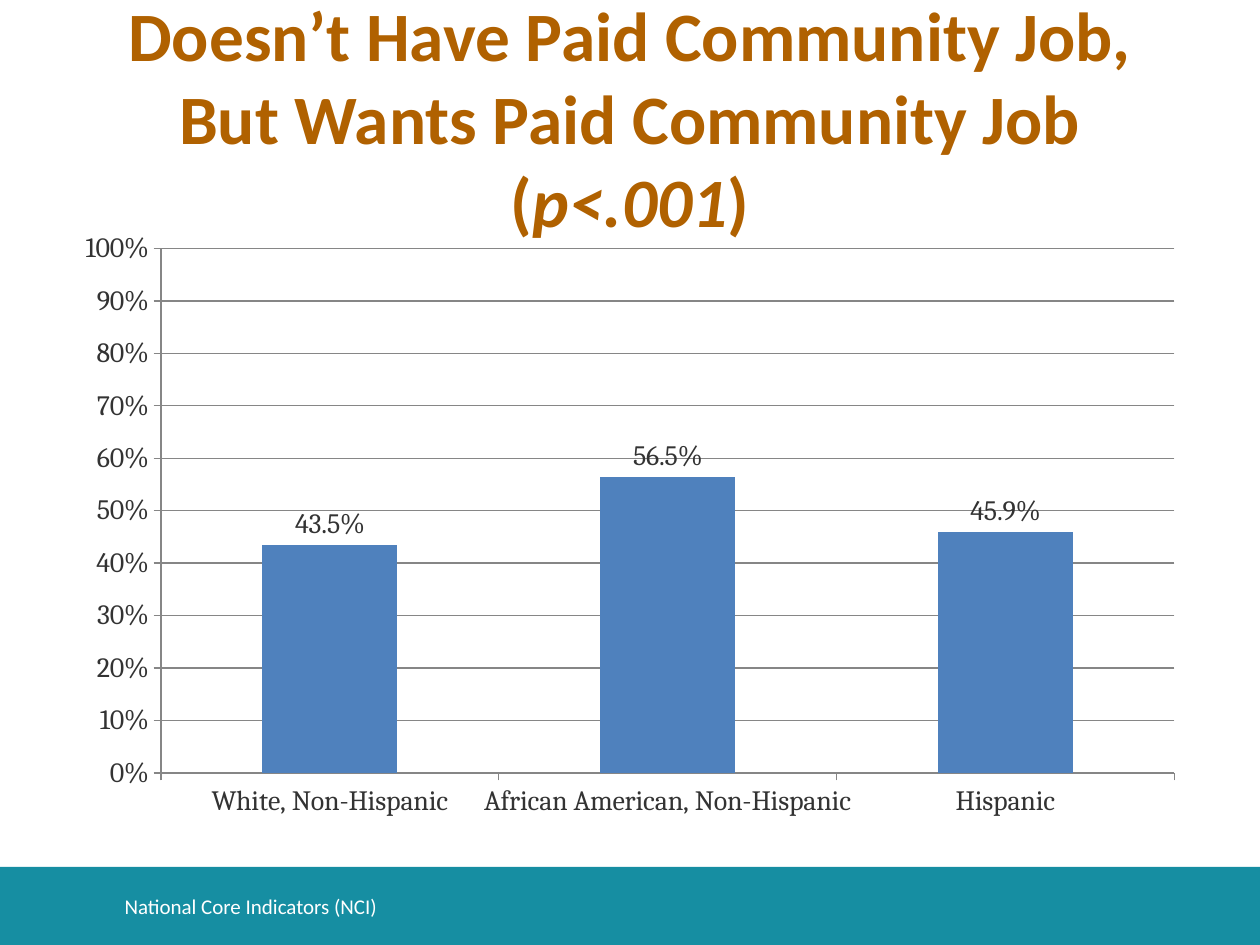
"""Build a slide charting who wants a paid community job, by ethnicity."""
from pptx import Presentation
from pptx.chart.data import CategoryChartData
from pptx.dml.color import RGBColor
from pptx.enum.chart import XL_CHART_TYPE, XL_LABEL_POSITION, XL_TICK_MARK
from pptx.enum.shapes import MSO_SHAPE
from pptx.enum.text import MSO_ANCHOR, MSO_AUTO_SIZE, PP_ALIGN
from pptx.util import Inches, Pt

COLUMNS = XL_CHART_TYPE.COLUMN_CLUSTERED
LABEL_ABOVE = XL_LABEL_POSITION.OUTSIDE_END
TICK_OUTSIDE = XL_TICK_MARK.OUTSIDE
RECTANGLE = MSO_SHAPE.RECTANGLE
MIDDLE = MSO_ANCHOR.MIDDLE
NO_AUTOFIT = MSO_AUTO_SIZE.NONE
CENTER, LEFT = PP_ALIGN.CENTER, PP_ALIGN.LEFT

THEME = {
    "heading": RGBColor(0xB0, 0x61, 0x00),
    "band": RGBColor(0x16, 0x8E, 0xA2),
    "footer": RGBColor(0xFF, 0xFF, 0xFF),
    "bar": RGBColor(0x4F, 0x81, 0xBD),
    "chart_text": RGBColor(0x33, 0x33, 0x33),
    "rule": RGBColor(0x86, 0x86, 0x86),
    "text_font": "Calibri",
    "chart_font": "Cambria",
    "heading_size": Pt(39.6),
    "footer_size": Pt(12),
    "chart_size": Pt(16),
}

HEADING = [
    ("Doesn’t Have Paid Community Job, But Wants Paid Community Job (", False),
    ("p<.001", True),
    (")", False),
]
FOOTER = [("National Core Indicators (NCI)", False)]
SHARES = {
    "White, Non-Hispanic": 0.435,
    "African American, Non-Hispanic": 0.565,
    "Hispanic": 0.459,
}

SLIDE_SIZE = (10, 7.5)
HEADING_BOX = (0.5, 0.3, 9, 1.25)
CHART_BOX = (0.5, 1.75, 9, 4.83)
BAND_BOX = (0, 6.88, 10, 0.62)
FOOTER_BOX = (0.89, 6.99, 7.4, 0.4)


def inches(box):
    return [Inches(length) for length in box]


def write(frame, runs, role, bold, alignment):
    frame.word_wrap = True
    frame.auto_size = NO_AUTOFIT
    frame.vertical_anchor = MIDDLE
    paragraph = frame.paragraphs[0]
    paragraph.alignment = alignment
    for wording, italic in runs:
        run = paragraph.add_run()
        run.text = wording
        run.font.name = THEME["text_font"]
        run.font.size = THEME[role + "_size"]
        run.font.color.rgb = THEME[role]
        run.font.bold = bold
        run.font.italic = italic


def add_heading(slide):
    heading = slide.shapes.title
    heading.left, heading.top, heading.width, heading.height = inches(HEADING_BOX)
    write(heading.text_frame, HEADING, "heading", True, CENTER)


def add_footer(slide):
    band = slide.shapes.add_shape(RECTANGLE, *inches(BAND_BOX))
    band.shadow.inherit = False
    band.fill.solid()
    band.fill.fore_color.rgb = THEME["band"]
    band.line.fill.background()
    footer = slide.shapes.add_textbox(*inches(FOOTER_BOX))
    write(footer.text_frame, FOOTER, "footer", False, LEFT)


def add_shares_chart(slide):
    shares = CategoryChartData(number_format="0.0%")
    shares.categories = list(SHARES)
    shares.add_series("Series 1", list(SHARES.values()))
    chart = slide.shapes.add_chart(COLUMNS, *inches(CHART_BOX), shares).chart
    chart.has_title = False
    chart.has_legend = False
    chart.font.name = THEME["chart_font"]
    chart.font.size = THEME["chart_size"]
    chart.font.color.rgb = THEME["chart_text"]

    for axis in (chart.category_axis, chart.value_axis):
        axis.major_tick_mark = TICK_OUTSIDE
        axis.format.line.color.rgb = THEME["rule"]
        axis.tick_labels.font.size = THEME["chart_size"]
    percent_axis = chart.value_axis
    percent_axis.minimum_scale = 0
    percent_axis.maximum_scale = 1
    percent_axis.major_unit = 0.1
    percent_axis.has_major_gridlines = True
    percent_axis.major_gridlines.format.line.color.rgb = THEME["rule"]
    percent_axis.tick_labels.number_format = "0%"
    percent_axis.tick_labels.number_format_is_linked = False

    plot = chart.plots[0]
    plot.gap_width = 150
    plot.vary_by_categories = False
    bars = plot.series[0]
    bars.format.fill.solid()
    bars.format.fill.fore_color.rgb = THEME["bar"]
    labels = bars.data_labels
    labels.show_value = True
    labels.number_format = "0.0%"
    labels.number_format_is_linked = False
    labels.position = LABEL_ABOVE
    labels.font.size = THEME["chart_size"]


def main():
    deck = Presentation()
    deck.slide_width, deck.slide_height = inches(SLIDE_SIZE)
    slide = deck.slides.add_slide(deck.slide_layouts[5])
    add_footer(slide)
    add_heading(slide)
    add_shares_chart(slide)
    deck.save("out.pptx")


if __name__ == "__main__":
    main()
